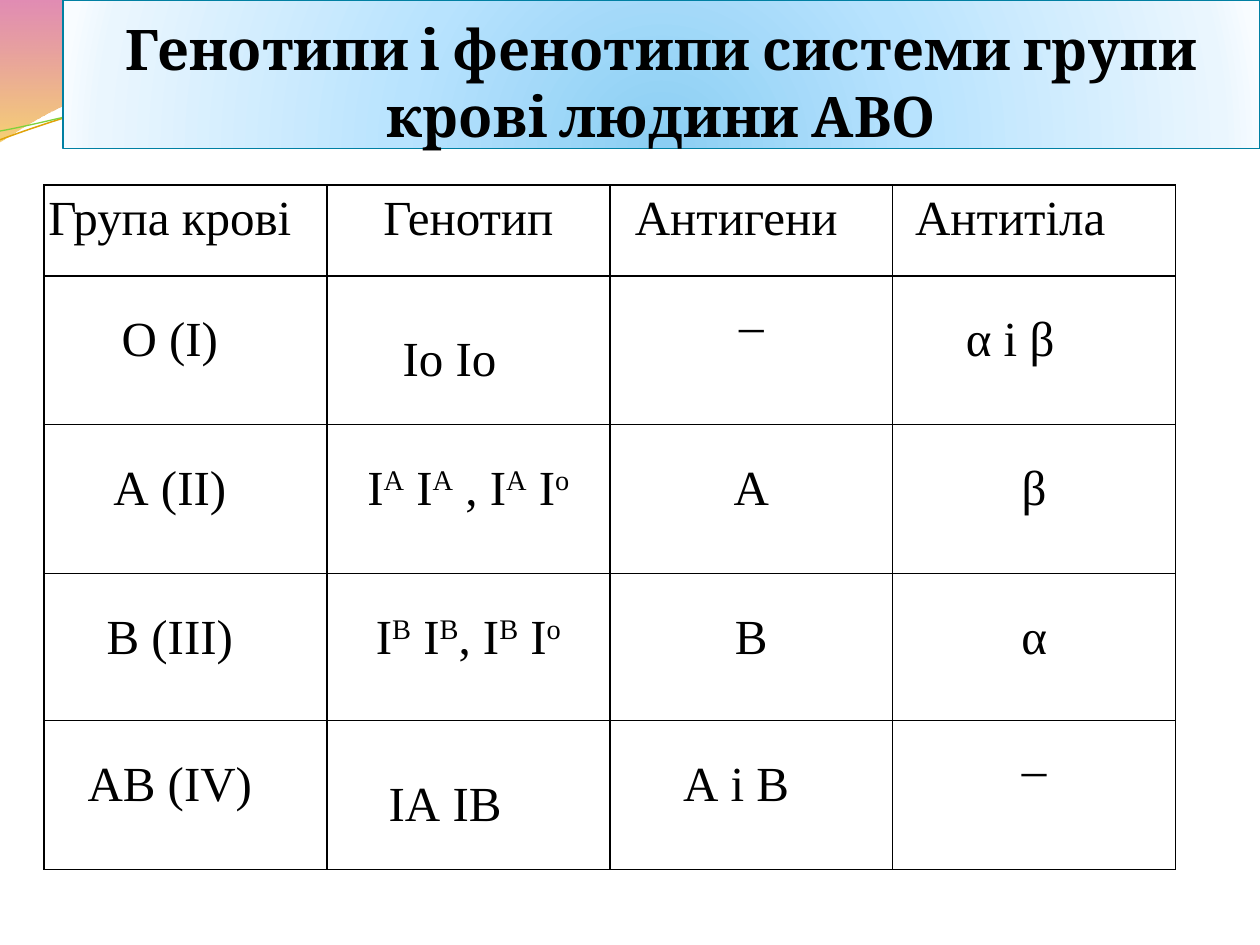
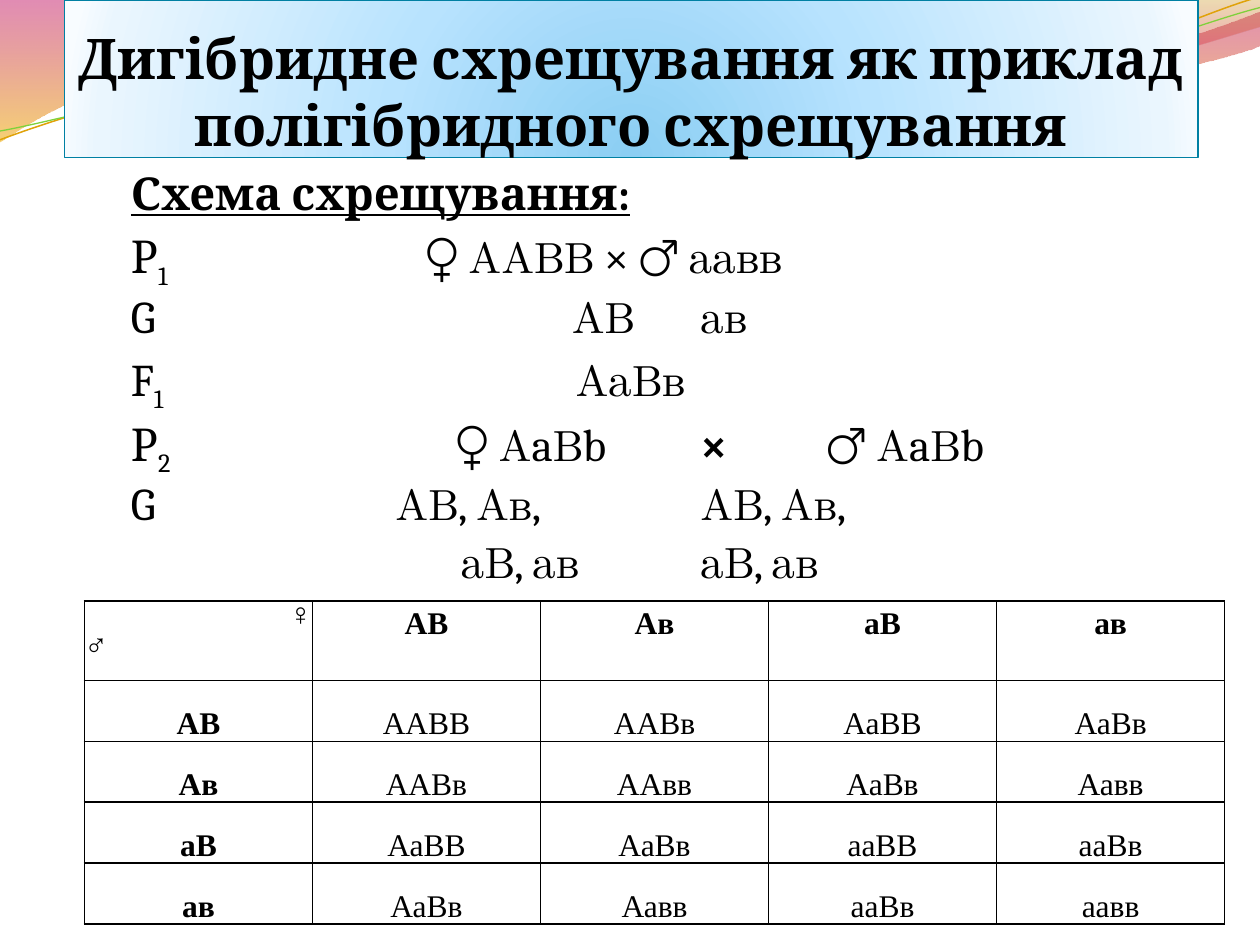
from dataclasses import dataclass
from typing import NamedTuple

from lxml.etree import SubElement
from pptx import Presentation
from pptx.dml.color import RGBColor
from pptx.enum.shapes import MSO_SHAPE
from pptx.enum.text import MSO_ANCHOR, PP_ALIGN
from pptx.oxml import parse_xml
from pptx.oxml.ns import nsdecls, qn
from pptx.util import Inches, Pt

BLACK = RGBColor(0x00, 0x00, 0x00)
TEAL = RGBColor(0x00, 0x80, 0xA3)
CRIMSON = RGBColor(0xBD, 0x00, 0x59)
AMBER = RGBColor(0xF0, 0xAB, 0x00)
OCHRE = RGBColor(0xC3, 0x8B, 0x00)
PINK = RGBColor(0xE1, 0x00, 0x6B)
GOLD = RGBColor(0xE0, 0xA2, 0x09)
GREEN = RGBColor(0x7F, 0xD1, 0x3B)
TITLE_BLUES = [RGBColor(0x8B, 0xCE, 0xF3), RGBColor(0xB8, 0xE3, 0xFE),
               RGBColor(0xEA, 0xF6, 0xFE), RGBColor(0xF8, 0xFC, 0xFF)]

TITLE_FONT = "Cambria"
TABLE_FONT = "Times New Roman"
LINE_PITCH = 17.4


class Stop(NamedTuple):
    position: int
    color: RGBColor
    opacity: int = 100


@dataclass(frozen=True)
class Wave:
    """Points: the start, then three per Bézier curve."""
    points: list
    tail: tuple = ()
    stops: tuple = ()
    color: RGBColor = BLACK
    weight: float = 0


class Run(NamedTuple):
    text: str
    offset: int = 0
    bold: bool = False
    underline: bool = False


class BodyLine(NamedTuple):
    runs: list
    tabs: tuple = ()


class Entry(NamedTuple):
    """Table text, the lines left free above it and its right margin."""
    text: str
    lines_above: float = 2
    right: float = 0


WAVES = [
    Wave([(4.4, -0.01), (4.76, 0.17), (6.64, 0.63), (7.58, 0.63),
          (8.53, 0.63), (9.58, 0.26), (10, 0.09), (10, 0.18), (10, 0.27), (10.01, 0.36),
          (9.83, 0.44), (8.7, 0.76), (7.46, 0.75), (6.22, 0.75), (3.82, 0.28), (2.57, 0.34),
          (1.29, 0.36), (0.46, 0.83), (-0.01, 1.13)],
         tail=((0, 0),), stops=(Stop(0, CRIMSON, 45), Stop(100, AMBER, 55))),
    Wave([(4.79, -0.01), (5.09, 0.11), (6.82, 0.62), (7.69, 0.65),
          (8.56, 0.69), (9.61, 0.32), (10, 0.21)],
         tail=((10, 0),), stops=(Stop(0, OCHRE, 30), Stop(80, PINK, 45))),
    Wave([(0, 1.11), (0.48, 0.93), (1.58, 0.57), (2.77, 0.52), (3.95, 0.47), (5.93, 0.89),
          (7.13, 0.8), (8.33, 0.71), (9.38, 0.15), (9.98, -0.02)], color=GOLD, weight=0.85),
    Wave([(0, 1.04), (0.47, 0.96), (1.64, 0.61), (2.83, 0.56), (4.03, 0.51), (5.97, 0.84),
          (7.17, 0.75), (8.36, 0.67), (9.41, 0.21), (10, 0.06)], color=GREEN, weight=0.75),
]

BLOOD_GROUPS = [
    [Entry("Група крові", 1, 0.25), Entry("Генотип", 1),
     Entry("Антигени", 1, 0.24), Entry("Антитіла", 1, 0.38)],
    [Entry("О (І)", right=0.25), Entry("Іо Іо", 2.65, 0.3), Entry("_", 1),
     Entry("α і β", right=0.38)],
    [Entry("А (ІІ)", right=0.25), Entry("І|А| І|А| , І|А| І|о"), Entry("А"), Entry("β")],
    [Entry("В (ІІІ)", right=0.25), Entry("І|В| І|В|, І|В| І|о"), Entry("В"), Entry("α")],
    [Entry("АВ (ІV)", right=0.25), Entry("ІА ІВ", 2.65, 0.37),
     Entry("А і В", right=0.24), Entry("_", 1)],
]

CROSS_SCHEME = [
    BodyLine([Run("Схема схрещування:", bold=True, underline=True)]),
    BodyLine([Run("Р"), Run("1", -25), Run("\t♀ ААВВ × ♂ аавв")], (2.34,)),
    BodyLine([Run("G\tАВ\tав")], (3.5, 4.52)),
    BodyLine([Run("F"), Run("1", -25), Run("\tАаВв")], (3.53,)),
    BodyLine([Run("Р"), Run("2", -25), Run("\t♀ АaВb\t"), Run("×", bold=True),
              Run("\t♂ АaВb")], (2.58, 4.52, 5.52)),
    BodyLine([Run("G\tАВ, Ав,\tАВ, Ав,")], (2.1, 4.52)),
    BodyLine([Run("\tаВ, ав\tаВ, ав")], (2.62, 4.52)),
]

GAMETES = ["АВ", "Ав", "аВ", "ав"]


def set_gradient(shape, stops, direction: str) -> None:
    shape.fill.background()
    marks = "".join(
        f'<a:gs pos="{s.position * 1000}"><a:srgbClr val="{s.color}">'
        f'<a:alpha val="{s.opacity * 1000}"/></a:srgbClr></a:gs>' for s in stops)
    properties = shape._element.spPr
    properties.replace(properties.find(qn("a:noFill")), parse_xml(
        f'<a:gradFill {nsdecls("a")} rotWithShape="1"><a:gsLst>{marks}</a:gsLst>'
        f'{direction}</a:gradFill>'))


def bend_segments(shape, curve_count: int) -> None:
    """Join every three leading line segments into one cubic Bézier curve."""
    segments = list(shape._element.iter(qn("a:lnTo")))
    for i in range(0, 3 * curve_count, 3):
        first, *others = segments[i:i + 3]
        outline = first.getparent()
        curve = SubElement(outline, qn("a:cubicBezTo"))
        outline.replace(first, curve)
        curve.append(first[0])
        for segment in others:
            curve.append(segment[0])
            outline.remove(segment)


def draw_wave(slide, wave: Wave) -> None:
    start, *rest = [(x * 1000, y * 1000) for x, y in (*wave.points, *wave.tail)]
    builder = slide.shapes.build_freeform(*start, scale=Inches(1) / 1000)
    builder.add_line_segments(rest, close=bool(wave.stops))
    shape = builder.convert_to_shape()
    bend_segments(shape, len(wave.points) // 3)
    shape.shadow.inherit = False
    if wave.stops:
        set_gradient(shape, wave.stops, '<a:lin ang="5400000" scaled="1"/>')
        shape.line.fill.background()
    else:
        shape.fill.background()
        shape.line.color.rgb = wave.color
        shape.line.width = Pt(wave.weight)


def add_run(paragraph, run: Run, font: str, size: float) -> None:
    added = paragraph.add_run()
    added.text = run.text
    added.font.name = font
    added.font.size = Pt(size)
    added.font.bold = run.bold
    added.font.underline = run.underline
    added.font.color.rgb = BLACK
    if run.offset:
        added.font._element.set("baseline", str(run.offset * 1000))


def draw_title(slide, text: str, left: float, width: float, height: float) -> None:
    band = slide.shapes.add_shape(MSO_SHAPE.RECTANGLE, Inches(left), 0,
                                  Inches(width), Inches(height))
    set_gradient(band, [Stop(*pair) for pair in zip((0, 43, 93, 100), TITLE_BLUES)],
                 '<a:path path="circle"><a:fillToRect l="50000" t="130000" '
                 'r="50000" b="-30000"/></a:path>')
    band.line.color.rgb = TEAL
    band.line.width = Pt(0.75)
    band.shadow.inherit = False
    frame = band.text_frame
    frame.word_wrap = True
    frame.vertical_anchor = MSO_ANCHOR.BOTTOM
    frame.margin_left = frame.margin_right = frame.margin_bottom = 0
    frame.margin_top = Inches(0.05)
    frame.paragraphs[0].alignment = PP_ALIGN.CENTER
    add_run(frame.paragraphs[0], Run(text, bold=True), TITLE_FONT, 32)


def start_slide(deck, title: str, left: float, width: float, height: float):
    slide = deck.slides.add_slide(deck.slide_layouts[6])
    for wave in WAVES:
        draw_wave(slide, wave)
    draw_title(slide, title, left, width, height)
    return slide


def add_grid(slide, left: float, top: float, column_width: float, row_heights: list,
             column_count: int):
    """Add an unfilled table with thin black borders and no cell margins."""
    table = slide.shapes.add_table(
        len(row_heights), column_count, Inches(left), Inches(top),
        Inches(column_width * column_count), Inches(sum(row_heights))).table
    table.first_row = table.horz_banding = False
    for column in table.columns:
        column.width = Inches(column_width)
    for row, height in zip(table.rows, row_heights):
        row.height = Inches(height)
    for cell in table.iter_cells():
        cell.margin_left = cell.margin_right = cell.margin_top = cell.margin_bottom = 0
        for side in "LRTB":
            cell._tc.get_or_add_tcPr().append(parse_xml(
                f'<a:ln{side} {nsdecls("a")} w="{Pt(1)}"><a:solidFill>'
                f'<a:srgbClr val="{BLACK}"/></a:solidFill></a:ln{side}>'))
        cell.fill.background()
    return table


def write_entry(cell, entry: Entry, size: float, bold: bool = False) -> None:
    """Parts of the text between bars alternate between normal and superscript."""
    cell.margin_top = Pt(entry.lines_above * LINE_PITCH)
    cell.margin_right = Inches(entry.right)
    paragraph = cell.text_frame.paragraphs[0]
    paragraph.alignment = PP_ALIGN.CENTER
    paragraph.line_spacing = Pt(LINE_PITCH)
    for i, part in enumerate(entry.text.split("|")):
        add_run(paragraph, Run(part, 30 * (i % 2), bold), TABLE_FONT, size)


def draw_scheme(slide) -> None:
    frame = slide.shapes.add_textbox(Inches(0.94), Inches(1.31),
                                     Inches(8.86), Inches(3.46)).text_frame
    frame.word_wrap = True
    for i, line in enumerate(CROSS_SCHEME):
        paragraph = frame.add_paragraph() if i else frame.paragraphs[0]
        paragraph.line_spacing = 0.9
        paragraph.space_before = Pt(5.2)
        for run in line.runs:
            add_run(paragraph, run, TITLE_FONT, 25.9)
        if line.tabs:
            stops = "".join(f'<a:tab pos="{Inches(tab)}" algn="l"/>' for tab in line.tabs)
            paragraph._p.get_or_add_pPr().append(
                parse_xml(f'<a:tabLst {nsdecls("a")}>{stops}</a:tabLst>'))


def offspring(first: str, second: str) -> str:
    """Pair the alleles of two gametes, the dominant one first."""
    return "".join("".join(sorted(pair)) for pair in zip(first, second))


def draw_punnett_square(slide) -> None:
    table = add_grid(slide, 0.67, 4.77, 1.81, [0.63] + [0.48] * 4, 5)
    corner = table.cell(0, 0).text_frame
    for paragraph, sign, side in ((corner.paragraphs[0], "♀", PP_ALIGN.RIGHT),
                                  (corner.add_paragraph(), "♂", PP_ALIGN.LEFT)):
        paragraph.alignment = side
        paragraph.line_spacing = Pt(17.8)
        add_run(paragraph, Run(sign), TABLE_FONT, 18)
    for i, gamete in enumerate(GAMETES, start=1):
        heading = table.cell(0, i)
        write_entry(heading, Entry(gamete, 0), 18, bold=True)
        heading.text_frame.paragraphs[0].line_spacing = 1.15
        write_entry(table.cell(i, 0), Entry(gamete, 1), 18, bold=True)
        for j, other in enumerate(GAMETES, start=1):
            write_entry(table.cell(i, j), Entry(offspring(gamete, other), 1), 18)


def main() -> None:
    deck = Presentation()
    deck.slide_width, deck.slide_height = Inches(10), Inches(7.5)

    blood = start_slide(deck, "Генотипи і фенотипи системи групи крові людини АВО",
                        0.5, 9.5, 1.18)
    table = add_grid(blood, 0.35, 1.47, 2.245, [0.72, 1.18, 1.18, 1.17, 1.18], 4)
    for r, row in enumerate(BLOOD_GROUPS):
        for c, entry in enumerate(row):
            write_entry(table.cell(r, c), entry, 28)

    cross = start_slide(
        deck, "Дигібридне схрещування як приклад полігібридного схрещування", 0.51, 9, 1.25)
    draw_scheme(cross)
    draw_punnett_square(cross)
    deck.save("out.pptx")


if __name__ == "__main__":
    main()
